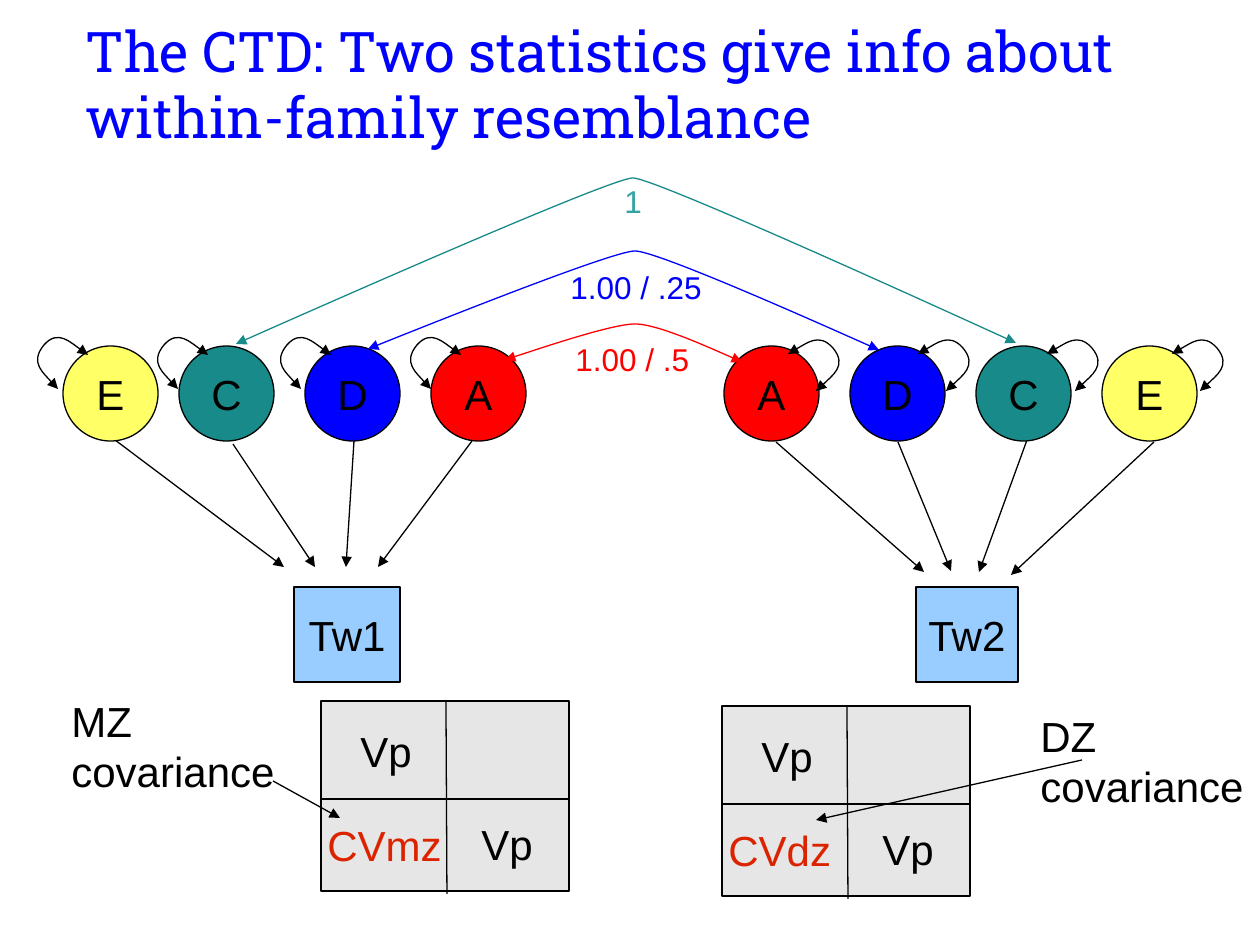
from lxml import etree
from pptx import Presentation
from pptx import util as u
from pptx.dml.color import RGBColor
from pptx.enum import shapes, text
from pptx.oxml import ns

PX = 914400 / 126
COLORS = {
    "black": "000000", "blue": "0000FF", "red": "FF0000", "teal": "198A8A",
    "light teal": "33A3A3", "yellow": "FFFF66", "sky": "99CCFF",
    "gray": "E6E6E6", "brick": "DC2300",
}
TITLE = "The CTD: Two statistics give info about within-family resemblance"
FACTOR_COLORS = {"E": "yellow", "C": "teal", "D": "blue", "A": "red"}
FACTOR_TOP, FACTOR_SIZE = 346, 95
TWINS = [
    {
        "name": "Tw1", "box": (294, 587, 106, 95),
        "factors": [("E", 63), ("C", 179), ("D", 305), ("A", 431)],
        "effects": [((115, 440), (284, 567)), ((233, 444), (315, 567)),
                    ((354, 441), (346, 567)), ((472, 441), (378, 567))],
        "variance_starts": [(88, 355), (208, 355), (331, 355), (461, 355)],
        "variance_loop": [(0, 0), (-30, -26), (-44, -10), (-59, 8), (-30, 34)],
    },
    {
        "name": "Tw2", "box": (916, 587, 102, 95),
        "factors": [("A", 724), ("D", 850), ("C", 976), ("E", 1102)],
        "effects": [((776, 442), (924, 572)), ((898, 442), (951, 571)),
                    ((1027, 440), (979, 572)), ((1154, 442), (1011, 575))],
        "variance_starts": [(816, 391), (946, 391), (1075, 391), (1200, 391)],
        "variance_loop": [(0, 0), (32, -25), (17, -43), (3, -59), (-28, -37)],
    },
]
CORRELATIONS = [
    ("1.00 / .5", (563, 334, 166, 57), "red", "red",
     [(742, 362), (658, 324), (635, 324), (612, 324), (505, 360)]),
    ("1.00 / .25", (558, 262, 158, 50), "blue", "blue",
     [(879, 350), (658, 251), (635, 251), (612, 251), (368, 349)]),
    ("1", (612, 176, 52, 50), "teal", "light teal",
     [(1016, 343), (655, 178), (633, 178), (610, 178), (236, 344)]),
]
MATRICES = [
    {"corner": (321, 701), "covariance": "CVmz", "covariance_width": 140,
     "label": "MZ covariance", "label_box": (59, 689, 241, 113),
     "pointer": ((273, 781), (340, 818))},
    {"corner": (722, 706), "covariance": "CVdz", "covariance_width": 127,
     "label": "DZ covariance", "label_box": (1028, 704, 232, 113),
     "pointer": ((1082, 760), (816, 820))},
]
MATRIX_WIDTH, MATRIX_HEIGHT = 248, 190


def emu(*lengths):
    return [round(length * PX) for length in lengths]


def rgb(color):
    return RGBColor.from_string(COLORS[color])


def write(frame, words, size=24, font="Arial", color="black", wrap=True,
          align=text.PP_ALIGN.LEFT, anchor=text.MSO_ANCHOR.TOP, spacing=None):
    frame.word_wrap = wrap
    frame.auto_size = text.MSO_AUTO_SIZE.NONE
    frame.vertical_anchor = anchor
    frame.margin_left = frame.margin_right = u.Inches(0.1)
    frame.margin_top = frame.margin_bottom = u.Inches(0.05)
    paragraph = frame.paragraphs[0]
    paragraph.alignment = align
    paragraph.line_spacing = spacing
    run = paragraph.add_run()
    run.text = words
    run.font.size = u.Pt(size)
    run.font.name = font
    run.font.color.rgb = rgb(color)


def add_label(slide, words, box, **style):
    write(slide.shapes.add_textbox(*emu(*box)).text_frame, words, **style)


def draw_line(item, color="black", ends=()):
    item.line.color.rgb = rgb(color)
    item.line.width = u.Pt(0.75)
    for end in ends:
        etree.SubElement(item.line._get_or_add_ln(), ns.qn("a:" + end), type="triangle")


def add_node(slide, kind, box, fill, words=None):
    node = slide.shapes.add_shape(kind, *emu(*box))
    node.shadow.inherit = False
    node.fill.solid()
    node.fill.fore_color.rgb = rgb(fill)
    draw_line(node)
    if kind == shapes.MSO_SHAPE.ROUNDED_RECTANGLE:
        node.adjustments[0] = 0
    if words:
        write(node.text_frame, words, wrap=False,
              align=text.PP_ALIGN.CENTER, anchor=text.MSO_ANCHOR.MIDDLE)


def add_straight(slide, start, end, ends=()):
    line = slide.shapes.add_connector(shapes.MSO_CONNECTOR.STRAIGHT, *emu(*start, *end))
    draw_line(line, ends=ends)
    etree.SubElement(line.element.spPr, ns.qn("a:effectLst"))


def add_curve(slide, points, color="black"):
    first, *middle, last = points
    builder = slide.shapes.build_freeform(*first, scale=PX)
    builder.add_line_segments([first, *middle, last, last], close=False)
    curve = builder.convert_to_shape()
    segments = list(curve.element.iter(ns.qn("a:lnTo")))
    for i in range(0, len(segments), 3):
        bezier = etree.Element(ns.qn("a:cubicBezTo"))
        segments[i].addprevious(bezier)
        for segment in segments[i:i + 3]:
            bezier.append(segment[0])
            segment.getparent().remove(segment)
    curve.shadow.inherit = False
    curve.fill.background()
    draw_line(curve, color, ("headEnd", "tailEnd"))


def add_matrix(slide, matrix):
    x, y = matrix["corner"]
    add_node(slide, shapes.MSO_SHAPE.ROUNDED_RECTANGLE,
             (x, y, MATRIX_WIDTH, MATRIX_HEIGHT), "gray")
    add_straight(slide, (x + MATRIX_WIDTH, y + 98), (x, y + 98))
    add_straight(slide, (x + 125, y), (x + 126, y + 193))
    for left, top in [(27, 18), (148, 111)]:
        add_label(slide, "Vp", (x + left, y + top, 84, 63), wrap=False)
    add_label(slide, matrix["covariance"],
              (x - 6, y + 112, matrix["covariance_width"], 63),
              color="brick", wrap=False)
    add_label(slide, matrix["label"], matrix["label_box"])
    add_straight(slide, *matrix["pointer"], ends=("tailEnd",))


def add_twin(slide, twin):
    add_node(slide, shapes.MSO_SHAPE.ROUNDED_RECTANGLE, twin["box"], "sky", twin["name"])
    for start, end in twin["effects"]:
        add_straight(slide, start, end, ends=("tailEnd",))
    for factor, left in twin["factors"]:
        add_node(slide, shapes.MSO_SHAPE.OVAL,
                 (left, FACTOR_TOP, FACTOR_SIZE, FACTOR_SIZE),
                 FACTOR_COLORS[factor], factor)
    for x, y in twin["variance_starts"]:
        add_curve(slide, [(x + dx, y + dy) for dx, dy in twin["variance_loop"]])


def main():
    deck = Presentation()
    deck.slide_width, deck.slide_height = emu(1260, 945)
    slide = deck.slides.add_slide(deck.slide_layouts[5])
    title = slide.shapes.title
    title.left, title.top, title.width, title.height = emu(73, 13, 1124, 145)
    write(title.text_frame, TITLE, size=32, font="Roboto Slab", color="blue",
          anchor=text.MSO_ANCHOR.BOTTOM, spacing=0.98)
    for twin in TWINS:
        add_twin(slide, twin)
    for matrix in MATRICES:
        add_matrix(slide, matrix)
    for words, box, line_color, text_color, arc in CORRELATIONS:
        add_curve(slide, arc, line_color)
        add_label(slide, words, box, size=18, color=text_color)
    deck.save("out.pptx")


if __name__ == "__main__":
    main()
